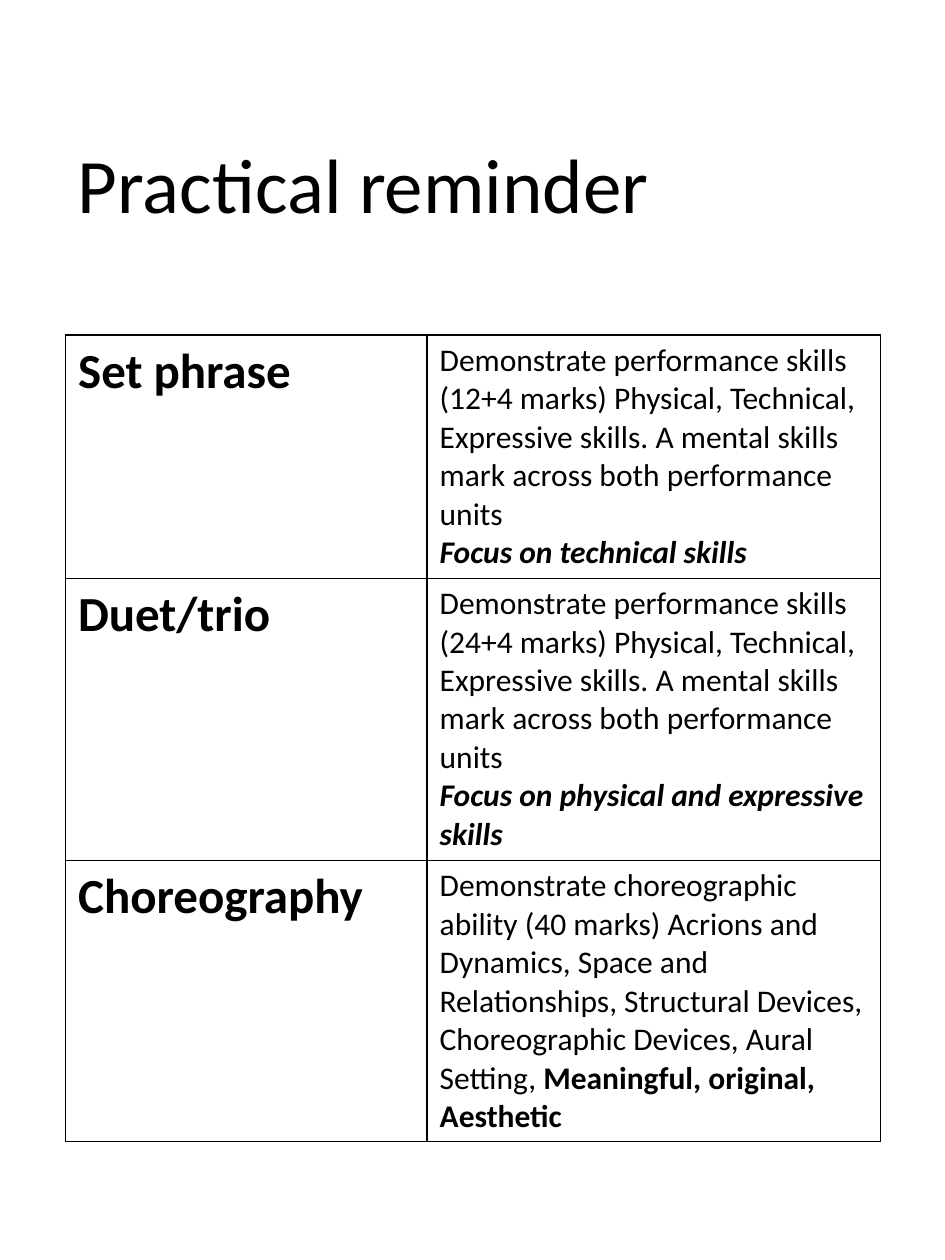
from dataclasses import dataclass

from lxml.etree import SubElement
from pptx import Presentation
from pptx.dml.color import RGBColor
from pptx.enum.text import MSO_ANCHOR
from pptx.oxml.ns import qn
from pptx.util import Inches, Pt


@dataclass(frozen=True)
class Theme:
    font: str = "Calibri"
    ink: str = "000000"
    title: int = 44
    head: int = 28
    body: int = 18
    rule: int = 1


@dataclass(frozen=True)
class Span:
    text: str
    bold: bool = False
    slant: bool = False


@dataclass(frozen=True)
class Unit:
    name: str
    high: float
    lines: tuple[tuple[Span, ...], ...]


THEME = Theme()
LEFT, WIDTH = 0.52, 6.47
COLS = (2.87, 3.6)

UNITS = (
    Unit("Set phrase", 1.93, (
        (Span("Demonstrate performance skills (12+4 marks) Physical, Technical, "
              "Expressive skills. A mental skills mark across both performance units"),),
        (Span("Focus on technical skills", bold=True, slant=True),),
    )),
    Unit("Duet/trio", 2.24, (
        (Span("Demonstrate performance skills (24+4 marks) Physical, Technical, "
              "Expressive skills. A mental skills mark across both performance units"),),
        (Span("Focus on physical and expressive skills", bold=True, slant=True),),
    )),
    Unit("Choreography", 2.23, (
        (Span("Demonstrate choreographic ability (40 marks) Acrions and Dynamics, "
              "Space and Relationships, Structural Devices, Choreographic Devices, "
              "Aural Setting, "),
         Span("Meaningful, original, Aesthetic", bold=True)),
    )),
)


def write(para, text: str, *, size: int, bold: bool = False, slant: bool = False) -> None:
    run = para.add_run()
    run.text = text
    font = run.font
    font.name, font.size = THEME.font, Pt(size)
    font.bold, font.italic = bold, slant
    font.color.rgb = RGBColor.from_string(THEME.ink)


def border(cell) -> None:
    props = cell._tc.get_or_add_tcPr()
    for side in ("lnL", "lnR", "lnT", "lnB"):
        line = SubElement(props, qn(f"a:{side}"), w=str(Pt(THEME.rule)))
        fill = SubElement(line, qn("a:solidFill"))
        SubElement(fill, qn("a:srgbClr"), val=THEME.ink)
    cell.fill.background()


def fill_row(table, index: int, unit: Unit) -> None:
    table.rows[index].height = Inches(unit.high)
    name, detail = table.cell(index, 0), table.cell(index, 1)
    border(name)
    border(detail)
    write(name.text_frame.paragraphs[0], unit.name, size=THEME.head, bold=True)
    frame = detail.text_frame
    for order, line in enumerate(unit.lines):
        para = frame.add_paragraph() if order else frame.paragraphs[0]
        for span in line:
            write(para, span.text, size=THEME.body, bold=span.bold, slant=span.slant)


def add_title(slide, text: str) -> None:
    box = slide.shapes.add_textbox(Inches(LEFT), Inches(0.53), Inches(WIDTH), Inches(1.93))
    frame = box.text_frame
    frame.word_wrap = True
    frame.vertical_anchor = MSO_ANCHOR.MIDDLE
    para = frame.paragraphs[0]
    para.line_spacing = 0.9
    write(para, text, size=THEME.title)


def add_units(slide, units: tuple[Unit, ...]) -> None:
    high = sum(unit.high for unit in units)
    table = slide.shapes.add_table(
        len(units), len(COLS), Inches(LEFT), Inches(2.66), Inches(WIDTH), Inches(high)
    ).table
    table.first_row = table.horz_banding = False
    for column, wide in zip(table.columns, COLS):
        column.width = Inches(wide)
    for index, unit in enumerate(units):
        fill_row(table, index, unit)


def main() -> None:
    deck = Presentation()
    deck.slide_width, deck.slide_height = Inches(7.5), Inches(10)
    slide = deck.slides.add_slide(deck.slide_layouts[6])
    add_title(slide, "Practical reminder")
    add_units(slide, UNITS)
    deck.save("out.pptx")


if __name__ == "__main__":
    main()
